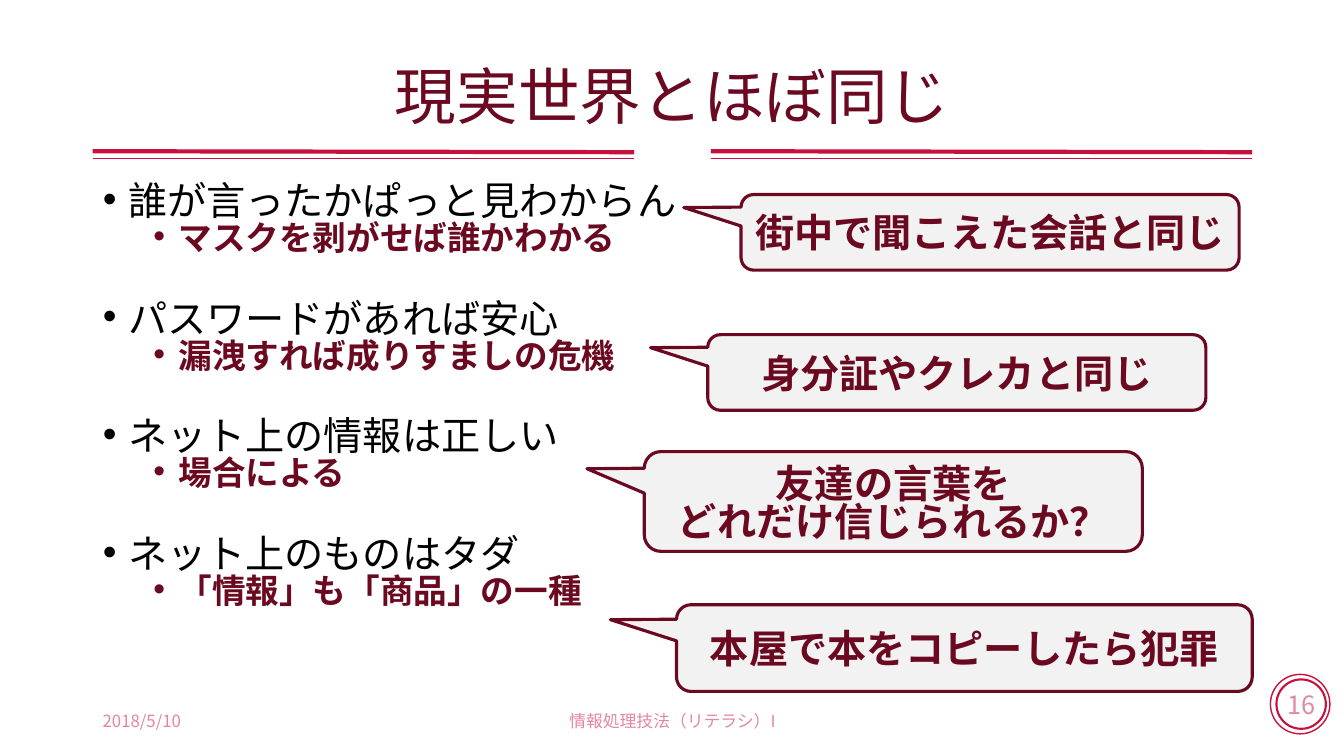
from lxml import etree
from pptx import Presentation
from pptx import util as u
from pptx.dml.color import RGBColor
from pptx.enum import shapes, text
from pptx.oxml import ns

WINE = RGBColor(0x6B, 0x09, 0x20)
ROSE = RGBColor(0xC8, 0x10, 0x3D)
GREY = RGBColor(0xF2, 0xF2, 0xF2)
BLACK = RGBColor(0, 0, 0)
MID = text.MSO_ANCHOR.MIDDLE
CENTER = text.PP_ALIGN.CENTER
LEFT = text.PP_ALIGN.LEFT


class Deck:
    face = "Noto Sans CJK JP"

    def __init__(self):
        self.show = Presentation()
        self.show.slide_width = u.Inches(13.33)
        self.show.slide_height = u.Inches(7.5)
        self.page = self.show.slides.add_slide(self.show.slide_layouts[1])

    def place(self, item, box):
        item.left, item.top, item.width, item.height = map(u.Inches, box)

    def say(self, para, words, size, color, bold=False, faint=False):
        run = para.add_run()
        run.text = words
        font = run.font
        font.name, font.size, font.bold = self.face, u.Pt(size), bold
        font.color.rgb = color
        props = run._r.get_or_add_rPr()
        etree.SubElement(props, ns.qn("a:ea"), typeface=self.face)
        if faint:
            tone = props.find(".//" + ns.qn("a:srgbClr"))
            etree.SubElement(tone, ns.qn("a:alpha"), val="50000")

    def title(self, words, box):
        item = self.page.shapes.title
        self.place(item, box)
        frame = item.text_frame
        frame.vertical_anchor = MID
        frame.auto_size = text.MSO_AUTO_SIZE.NONE
        para = frame.paragraphs[0]
        para.alignment, para.line_spacing = CENTER, 0.9
        self.say(para, words, 44, WINE)

    def point(self, para, words, level, before):
        props = para._p.get_or_add_pPr()
        props.set("marL", str(u.Inches(0.25 + 0.5 * level)))
        props.set("indent", str(u.Inches(-0.25)))
        etree.SubElement(props, ns.qn("a:buFont"), typeface="Arial")
        etree.SubElement(props, ns.qn("a:buChar"), char="•")
        para.level, para.alignment = level, LEFT
        para.line_spacing = 0.7
        para.space_before = u.Pt(before)
        size, color = ((28, BLACK), (24, WINE))[level]
        self.say(para, words, size, color, bold=level == 1)

    def list(self, pairs, box):
        item = self.page.placeholders[1]
        self.place(item, box)
        frame = item.text_frame
        frame.vertical_anchor = text.MSO_ANCHOR.TOP
        frame.auto_size = text.MSO_AUTO_SIZE.NONE
        for i, (head, sub) in enumerate(pairs):
            para = frame.add_paragraph() if i else frame.paragraphs[0]
            self.point(para, head, 0, 36.3 if i else 0)
            self.point(frame.add_paragraph(), sub, 1, 4)

    def label(self, words, box, align):
        item = self.page.shapes.add_textbox(*map(u.Inches, box))
        frame = item.text_frame
        frame.word_wrap, frame.vertical_anchor = True, MID
        para = frame.paragraphs[0]
        para.alignment = align
        self.say(para, words, 12, ROSE, faint=True)

    def rule(self, start, end, width):
        line = self.page.shapes.add_connector(
            shapes.MSO_CONNECTOR.STRAIGHT, *map(u.Inches, start + end))
        line.line.color.rgb, line.line.width = ROSE, u.Pt(width)
        etree.SubElement(line._element.spPr, ns.qn("a:effectLst"))

    def shape(self, kind, box, edge, width, fill=None):
        item = self.page.shapes.add_shape(kind, *map(u.Inches, box))
        item.shadow.inherit = False
        item.line.color.rgb, item.line.width = edge, u.Pt(width)
        if fill is None:
            item.fill.background()
        else:
            item.fill.solid()
            item.fill.fore_color.rgb = fill
        item.text_frame.vertical_anchor = MID
        return item

    def badge(self, number):
        oval = shapes.MSO_SHAPE.OVAL
        self.shape(oval, (12.6, 6.69, 0.59, 0.59), ROSE, 1)
        ring = self.shape(oval, (12.66, 6.74, 0.49, 0.49), ROSE, 1.5)
        ring.text_frame.word_wrap = False
        para = ring.text_frame.paragraphs[0]
        para.alignment = CENTER
        self.say(para, number, 18, ROSE, faint=True)

    def callout(self, lines, box):
        item = self.shape(shapes.MSO_SHAPE.ROUNDED_RECTANGULAR_CALLOUT,
                          box, WINE, 2.25, GREY)
        for i, value in enumerate((-0.615, -0.328, 0.167)):
            item.adjustments[i] = value
        frame = item.text_frame
        frame.word_wrap = True
        frame.margin_left = frame.margin_right = u.Inches(0.05)
        for i, words in enumerate(lines):
            para = frame.add_paragraph() if i else frame.paragraphs[0]
            para.alignment = CENTER
            para.line_spacing = 0.8 if i else 1.0
            self.say(para, words, 28, WINE, bold=True)


def main():
    deck = Deck()
    deck.badge("16")
    for left in (7.05, 0.92):
        right = left + 5.37
        deck.rule((left, 1.5), (right, 1.51), 3)
        deck.rule((left, 1.57), (right, 1.57), 1)
    deck.title("現実世界とほぼ同じ", (0.92, 0.4, 11.5, 1.17))
    deck.list([
        ("誰が言ったかぱっと見わからん", "マスクを剥がせば誰かわかる"),
        ("パスワードがあれば安心", "漏洩すれば成りすましの危機"),
        ("ネット上の情報は正しい", "場合による"),
        ("ネット上のものはタダ", "「情報」も「商品」の一種"),
    ], (0.92, 1.83, 11.5, 4.93))
    deck.label("2018/5/10", (0.92, 6.95, 3, 0.4), LEFT)
    deck.label("情報処理技法（リテラシ）I", (4.42, 6.95, 4.5, 0.4), CENTER)
    for lines, box in (
        (["街中で聞こえた会話と同じ"], (7.35, 1.93, 4.94, 0.75)),
        (["身分証やクレカと同じ"], (7.02, 3.32, 4.94, 0.75)),
        (["本屋で本をコピーしたら犯罪"], (6.71, 6, 5.71, 0.86)),
        (["友達の言葉を", "どれだけ信じられるか？"], (6.39, 4.48, 4.94, 0.99)),
    ):
        deck.callout(lines, box)
    deck.show.save("out.pptx")


if __name__ == "__main__":
    main()
